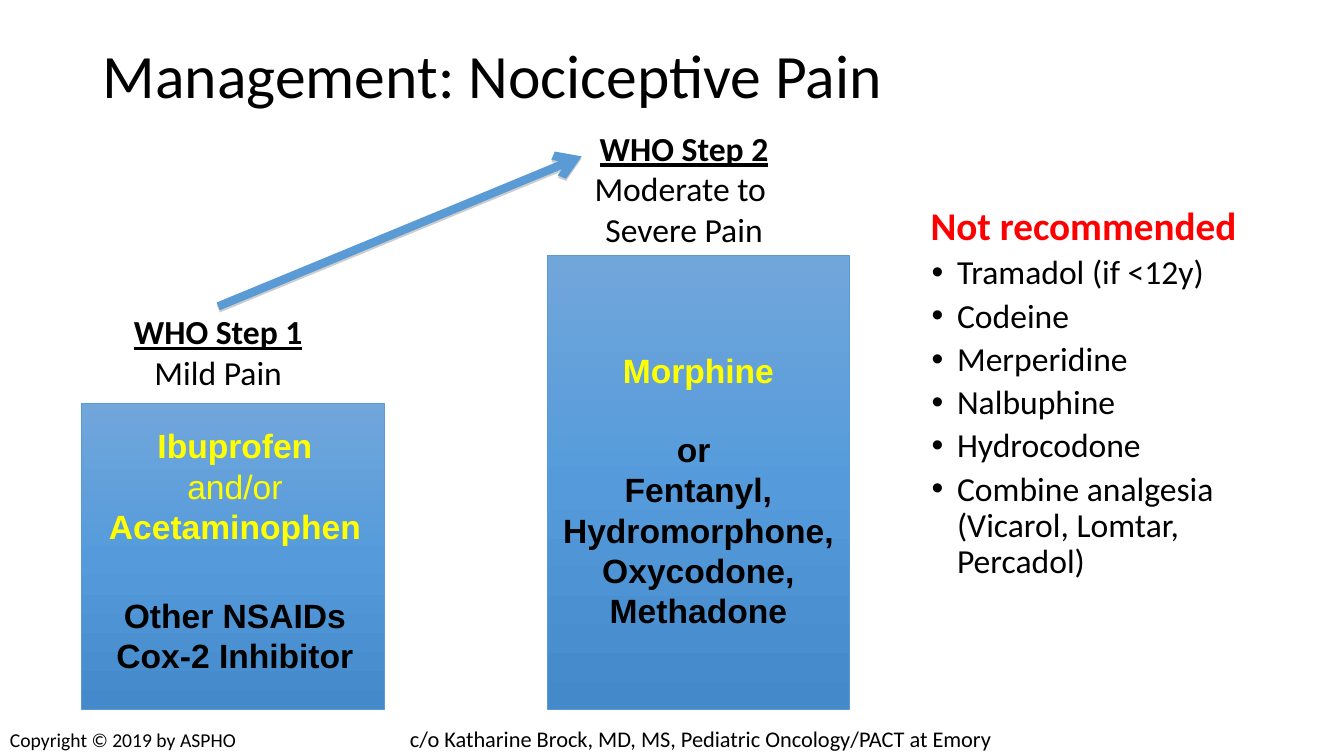
from lxml import etree
from pptx import Presentation
from pptx.dml.color import RGBColor
from pptx.enum.shapes import MSO_CONNECTOR, MSO_SHAPE
from pptx.enum.text import MSO_ANCHOR, PP_ALIGN
from pptx.oxml import parse_xml
from pptx.oxml.ns import nsdecls, qn
from pptx.util import Cm, Pt

BLACK, RED, YELLOW, BLUE = "000000", "FF0000", "FFFF00", "5B9BD5"
BAR_STOPS = [(0, "71A6DB"), (50, "559BDB"), (100, "448ACA")]
BAR_WIDTH, BAR_BOTTOM = 7.62, 17.88

# Lengths in centimetres: left, top, width, height
TITLE = ("Management: Nociceptive Pain", (2.34, 1.02, 29.2, 3.68), 44)
FOOTERS = [
    ("c/o Katharine Brock, MD, MS, Pediatric Oncology/PACT at Emory",
     (10.08, 18.16, 16.76, 0.94), 16),
    ("Copyright © 2019 by ASPHO", (0, 18.21, 6.3, 0.86), 14),
]

# Drug lines: text, colour, bold, space before in points
STEPS = [
    {
        "bar": (2.06, 10.16),
        "label": ["WHO Step 1", "Mild Pain"],
        "label_box": (3.1, 7.72, 4.8, 2.31),
        "drugs": [
            ("Ibuprofen", YELLOW, True, 0),
            ("and/or", YELLOW, False, 0),
            ("Acetaminophen", YELLOW, True, 0),
            ("Other NSAIDs", BLACK, True, 34.5),
            ("Cox-2 Inhibitor", BLACK, True, 0),
        ],
        "drug_box": (2.11, 10.59, BAR_WIDTH, 6.68),
    },
    {
        "bar": (13.79, 6.43),
        "label": ["WHO Step 2", "Moderate to ", "Severe Pain"],
        "label_box": (14.66, 3.1, 5.16, 3.33),
        "drugs": [
            ("Morphine", YELLOW, True, 0),
            ("or ", BLACK, True, 27.6),
            ("Fentanyl, Hydromorphone, Oxycodone, Methadone", BLACK, True, 0),
        ],
        "drug_box": (13.79, 8.69, BAR_WIDTH, 7.49),
    },
]
ARROW_END = (14.66, 3.94)

AVOID_BOX = (21.97, 5.08, 10.67, 12.09)
AVOID_HEADING = "Not recommended"
AVOID_DRUGS = [
    "Tramadol (if <12y)", "Codeine", "Merperidine", "Nalbuphine",
    "Hydrocodone", "Combine analgesia (Vicarol, Lomtar, Percadol)",
]


def rgb(value):
    return RGBColor.from_string(value)


def add_text(slide, box, lines, wrap=True):
    """Add a text box with one paragraph per line and return it."""
    shape = slide.shapes.add_textbox(*map(Cm, box))
    frame = shape.text_frame
    frame.text = "\n".join(lines)
    frame.word_wrap = wrap
    frame.vertical_anchor = MSO_ANCHOR.TOP
    return shape


def style(paragraph, size, color=BLACK, font="Calibri", bold=False, underline=False):
    for run in paragraph.runs:
        run.font.name = font
        run.font.size = Pt(size)
        run.font.bold = bold
        run.font.underline = underline
        run.font.color.rgb = rgb(color)


def add_bullet(paragraph):
    properties = paragraph._p.get_or_add_pPr()
    properties.set("marL", str(Cm(1.9)))
    properties.set("indent", str(-Cm(0.64)))
    etree.SubElement(properties, qn("a:buFont")).set("typeface", "Arial")
    etree.SubElement(properties, qn("a:buChar")).set("char", "•")


def add_bar(slide, left, top):
    bar = slide.shapes.add_shape(MSO_SHAPE.RECTANGLE, Cm(left), Cm(top),
                                 Cm(BAR_WIDTH), Cm(BAR_BOTTOM - top))
    bar.shadow.inherit = False
    bar.line.color.rgb = rgb(BLUE)
    bar.line.width = Pt(0.5)
    bar.fill.background()
    stops = "".join(f'<a:gs pos="{position * 1000}"><a:srgbClr val="{color}"/></a:gs>'
                    for position, color in BAR_STOPS)
    gradient = parse_xml(f'<a:gradFill {nsdecls("a")} rotWithShape="1"><a:gsLst>{stops}'
                         '</a:gsLst><a:lin ang="5400000" scaled="0"/></a:gradFill>')
    properties = bar._element.spPr
    properties.replace(properties.find(qn("a:noFill")), gradient)


def add_arrow(slide, start_label):
    end_x, end_y = map(Cm, ARROW_END)
    arrow = slide.shapes.add_connector(MSO_CONNECTOR.STRAIGHT, 0, 0, end_x, end_y)
    arrow.begin_connect(start_label, 0)
    arrow.line.color.rgb = rgb(BLUE)
    arrow.line.width = Pt(6)
    etree.SubElement(arrow.line._get_or_add_ln(), qn("a:tailEnd")).set("type", "arrow")
    arrow._element.spPr.append(parse_xml(
        f'<a:effectLst {nsdecls("a")}><a:outerShdw blurRad="0" dist="{Pt(1.6)}" '
        'dir="5400000" rotWithShape="0"><a:srgbClr val="808080">'
        '<a:alpha val="38000"/></a:srgbClr></a:outerShdw></a:effectLst>'))


def add_avoid_list(slide):
    shape = add_text(slide, AVOID_BOX, [AVOID_HEADING] + AVOID_DRUGS)
    heading, *items = shape.text_frame.paragraphs
    heading.alignment = PP_ALIGN.CENTER
    heading.line_spacing = 0.9
    style(heading, 28, RED, bold=True)
    for paragraph in items:
        add_bullet(paragraph)
        paragraph.line_spacing = 0.9
        paragraph.space_before = Pt(5)
        style(paragraph, 24)


def add_label(slide, step):
    label = add_text(slide, step["label_box"], step["label"], wrap=False)
    for index, paragraph in enumerate(label.text_frame.paragraphs):
        paragraph.alignment = PP_ALIGN.CENTER
        style(paragraph, 24, bold=index == 0, underline=index == 0)
    return label


def add_drugs(slide, step):
    shape = add_text(slide, step["drug_box"], [drug[0] for drug in step["drugs"]])
    for paragraph, (_, color, bold, gap) in zip(shape.text_frame.paragraphs, step["drugs"]):
        paragraph.alignment = PP_ALIGN.CENTER
        if gap:
            paragraph.space_before = Pt(gap)
        style(paragraph, 24, color, "Arial", bold)


def main():
    presentation = Presentation()
    presentation.slide_width, presentation.slide_height = Cm(33.87), Cm(19.05)
    slide = presentation.slides.add_slide(presentation.slide_layouts[6])

    text, box, size = TITLE
    title = add_text(slide, box, [text]).text_frame.paragraphs[0]
    title.line_spacing = 0.9
    style(title, size)

    add_avoid_list(slide)
    for step in STEPS:
        add_bar(slide, *step["bar"])
    labels = [add_label(slide, step) for step in STEPS]
    for step in STEPS:
        add_drugs(slide, step)
    add_arrow(slide, labels[0])

    for text, box, size in FOOTERS:
        style(add_text(slide, box, [text]).text_frame.paragraphs[0], size)

    presentation.save("out.pptx")


if __name__ == "__main__":
    main()
